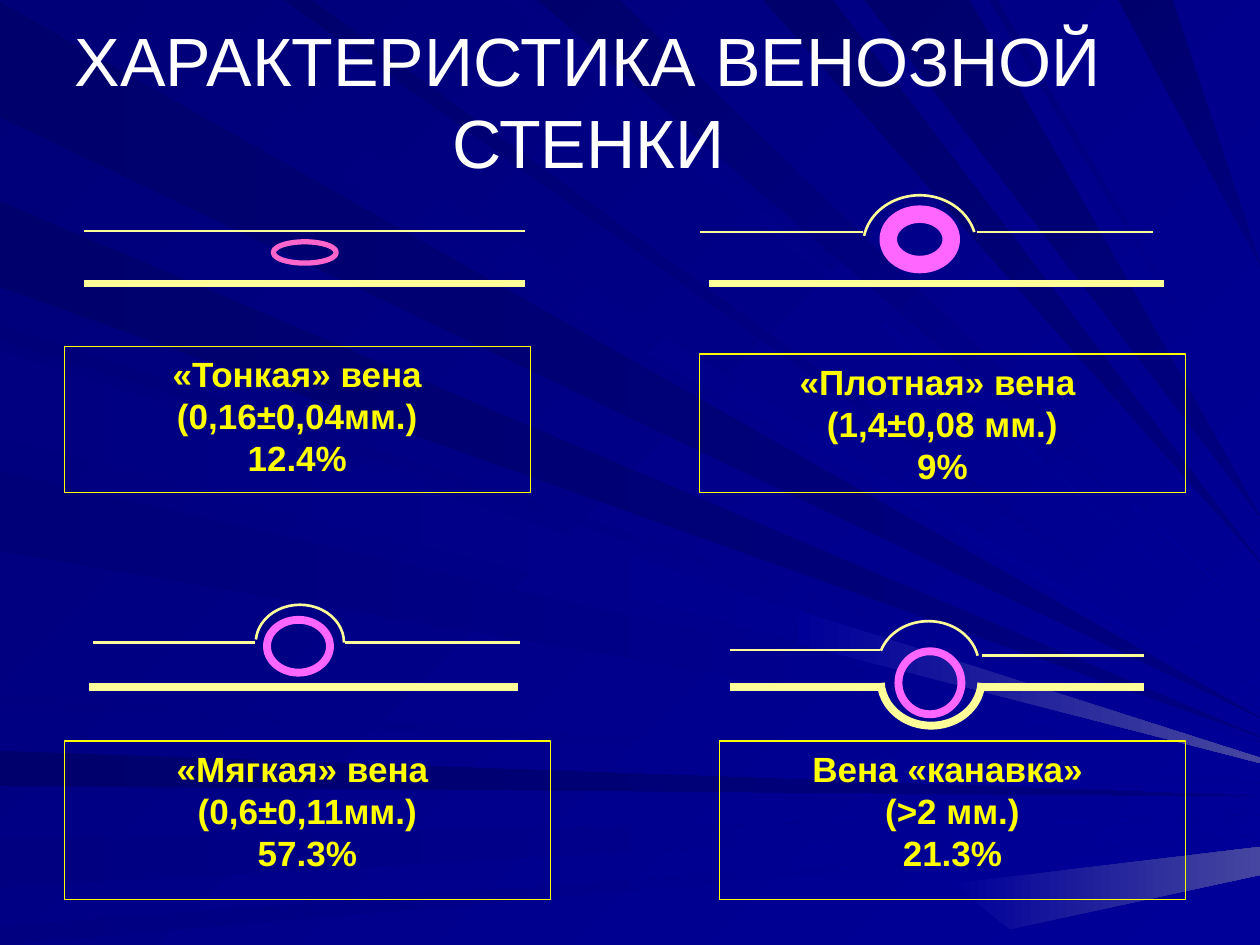
from lxml import etree
from pptx import Presentation
from pptx.dml.color import RGBColor
from pptx.enum import shapes as sh, text as tx
from pptx.oxml.ns import qn
from pptx.util import Pt

WHITE = RGBColor(255, 255, 255)
CREAM = RGBColor(255, 255, 153)
YELLOW = RGBColor(255, 255, 0)
PINK = RGBColor(255, 102, 255)
ROSE = RGBColor(255, 102, 204)
NAVY = RGBColor(0, 0, 120)
BLUE = RGBColor(0, 0, 153)
DEEP = RGBColor(0, 0, 108)
DUSK = RGBColor(0, 0, 128)
HAZE = RGBColor(70, 70, 160)
FONT = "Arial"
WIDE, HIGH = 720, 540
THIN, THICK = 1.5, 4.5

TITLE = "ХАРАКТЕРИСТИКА ВЕНОЗНОЙ СТЕНКИ"

LEFT_RAYS = [
    (1, 67, 410, DEEP, DUSK), (429, 449, 455, DEEP, DUSK), (479, 507, 466, DUSK, BLUE),
    (529, 540, 477, DUSK, BLUE), (186, 194, 424, NAVY, BLUE), (115, 164, 421, DEEP, DUSK),
    (200, 250, 434, DUSK, BLUE), (269, 315, 436, NAVY, BLUE), (397, 403, 448, DUSK, BLUE),
]
TOP_RAYS = [
    (19, 73, 405, NAVY, BLUE), (162, 178, 396, DEEP, BLUE), (287, 300, 373, DUSK, BLUE),
    (307, 354, 355, DEEP, BLUE), (436, 476, 321, DEEP, DUSK), (494, 554, 295, DEEP, DUSK),
    (565, 570, 257, NAVY, BLUE), (639, 670, 151, DEEP, DUSK),
]
GLOWS = [
    [(457, 349), (720, 433), (720, 436), (456, 368)],
    [(544, 505), (720, 484), (720, 500), (577, 531)],
]

WALLS = [
    (48, 300, 132, THIN), (48, 300, 162, THICK),
    (400, 493, 132.5, THIN), (558, 659, 132.5, THIN), (405, 665, 162, THICK),
    (53, 146, 367, THIN), (197, 297, 367, THIN), (51, 296, 392.4, THICK),
    (417, 503, 371.5, THIN), (561, 654, 374.4, THIN),
    (417, 503, 392.4, THICK), (561, 654, 392.4, THICK),
]

ARCS = [
    ((146.2, 345.6, 50.4, 43.2), 184, 0, THIN),
    ((493.2, 111.6, 64.8, 57.6), 190, 346, THIN),
    ((503.3, 362.9, 57.6, 51.8), 3, 177, THICK),
    ((501.8, 355, 57.6, 50.4), 197, 349, THIN),
]

VEINS = [
    ((156.2, 138.2, 36, 12.2), ROSE, 3),
    ((152.6, 354.2, 36, 30.2), PINK, THICK),
    ((507.6, 122.4, 36, 28.8), PINK, 10),
    ((513.4, 372.2, 36, 36), PINK, THICK),
]

LABELS = [
    ((36.7, 198, 266.4, 83.5), ["«Тонкая» вена (0,16±0,04мм.)", "12.4%"]),
    ((399.6, 202.3, 277.9, 79.2), ["«Плотная» вена ", "(1,4±0,08 мм.)", "9%"]),
    ((36.7, 423.4, 277.9, 90.7), ["«Мягкая» вена ", "(0,6±0,11мм.)", "57.3%"]),
    ((411.1, 423.4, 266.4, 90.7), ["Вена «канавка» ", "(>2 мм.)", "21.3%"]),
]


def blend(fill, first, last, angle):
    fill.gradient()
    fill.gradient_angle = (360 - angle) % 360
    for stop, color in zip(fill.gradient_stops, (first, last)):
        stop.color.rgb = color


def add_ray(slide, points, first, last, angle):
    spots = [(Pt(x), Pt(y)) for x, y in points]
    form = slide.shapes.build_freeform(*spots[0])
    form.add_line_segments(spots[1:], close=True)
    ray = form.convert_to_shape()
    ray.shadow.inherit = False
    ray.line.fill.background()
    blend(ray.fill, first, last, angle)


def add_rays(slide):
    for top, bottom, tip, first, last in LEFT_RAYS:
        add_ray(slide, [(0, top), (0, bottom), (WIDE, tip)], first, last, 0)
    for left, right, tip, first, last in TOP_RAYS:
        add_ray(slide, [(left, 0), (right, 0), (WIDE, tip)], first, last, 45)
    for points in GLOWS:
        add_ray(slide, points, BLUE, HAZE, 0)


def stroke(item, color, width):
    item.line.color.rgb = color
    item.line.width = Pt(width)


def add_wall(slide, left, right, y, width):
    wall = slide.shapes.add_connector(sh.MSO_CONNECTOR.STRAIGHT, Pt(left), Pt(y), Pt(right), Pt(y))
    stroke(wall, CREAM, width)
    etree.SubElement(wall._element.spPr, qn("a:effectLst"))


def outline(slide, kind, box, color, width):
    shape = slide.shapes.add_shape(kind, *map(Pt, box))
    shape.shadow.inherit = False
    shape.fill.background()
    stroke(shape, color, width)
    return shape


def style(par, size, color, bold):
    par.alignment = tx.PP_ALIGN.CENTER
    for run in par.runs:
        run.font.name = FONT
        run.font.size = Pt(size)
        run.font.bold = bold
        run.font.color.rgb = color


def add_label(slide, box, lines):
    frame = outline(slide, sh.MSO_SHAPE.RECTANGLE, box, YELLOW, 0.75).text_frame
    frame.word_wrap = True
    frame.vertical_anchor = tx.MSO_ANCHOR.TOP
    frame.text = "\n".join(lines)
    for par in frame.paragraphs:
        style(par, 20, YELLOW, True)


def set_title(slide):
    title = slide.shapes.title
    title.left, title.top, title.width, title.height = map(Pt, (30.2, 12.2, 612, 90))
    frame = title.text_frame
    frame.text = TITLE
    frame.word_wrap = True
    frame.auto_size = tx.MSO_AUTO_SIZE.NONE
    frame.vertical_anchor = tx.MSO_ANCHOR.MIDDLE
    style(frame.paragraphs[0], 39, WHITE, False)
    slide.shapes._spTree.append(title._element)


def main():
    deck = Presentation()
    deck.slide_width, deck.slide_height = Pt(WIDE), Pt(HIGH)
    slide = deck.slides.add_slide(deck.slide_layouts[5])
    blend(slide.background.fill, NAVY, BLUE, 45)
    add_rays(slide)
    set_title(slide)
    for wall in WALLS:
        add_wall(slide, *wall)
    for box, start, end, width in ARCS:
        arc = outline(slide, sh.MSO_SHAPE.ARC, box, CREAM, width)
        arc.adjustments[0] = start * 0.6
        arc.adjustments[1] = end * 0.6
    for vein in VEINS:
        outline(slide, sh.MSO_SHAPE.OVAL, *vein)
    for label in LABELS:
        add_label(slide, *label)
    deck.save("out.pptx")


if __name__ == "__main__":
    main()
